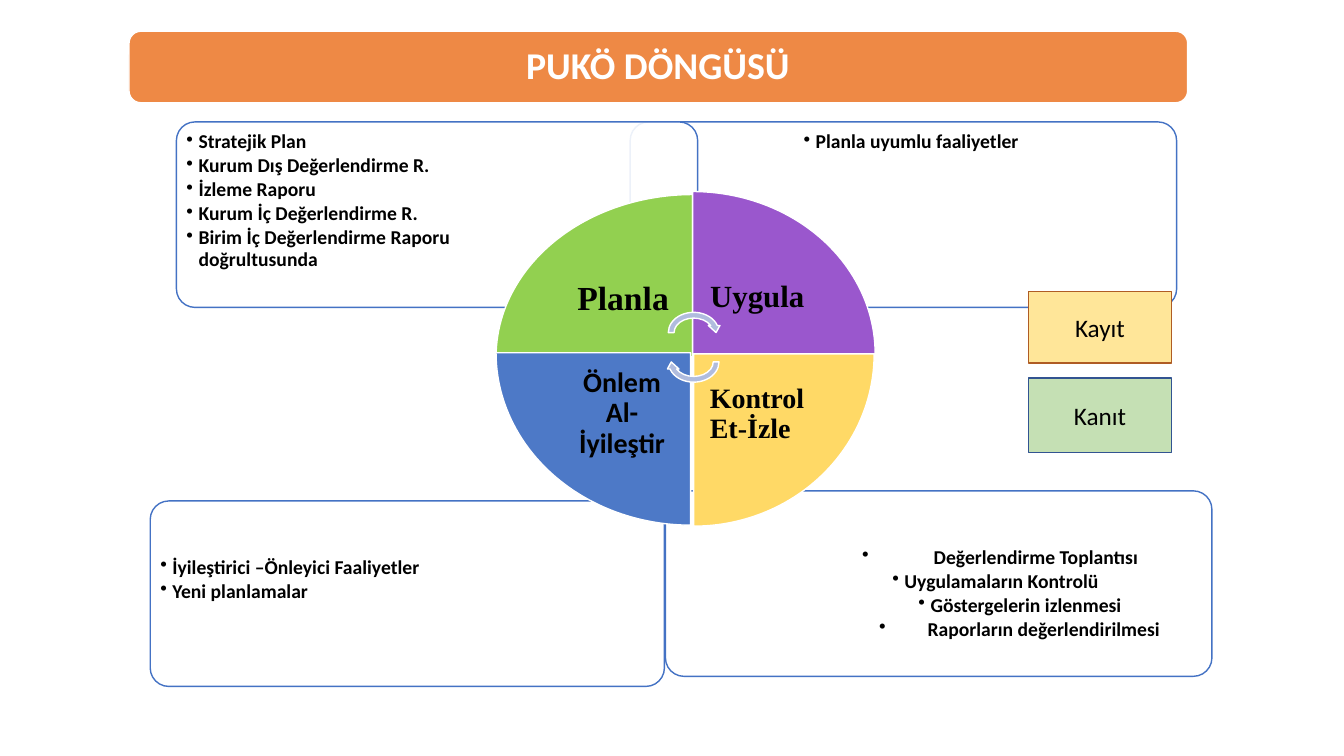
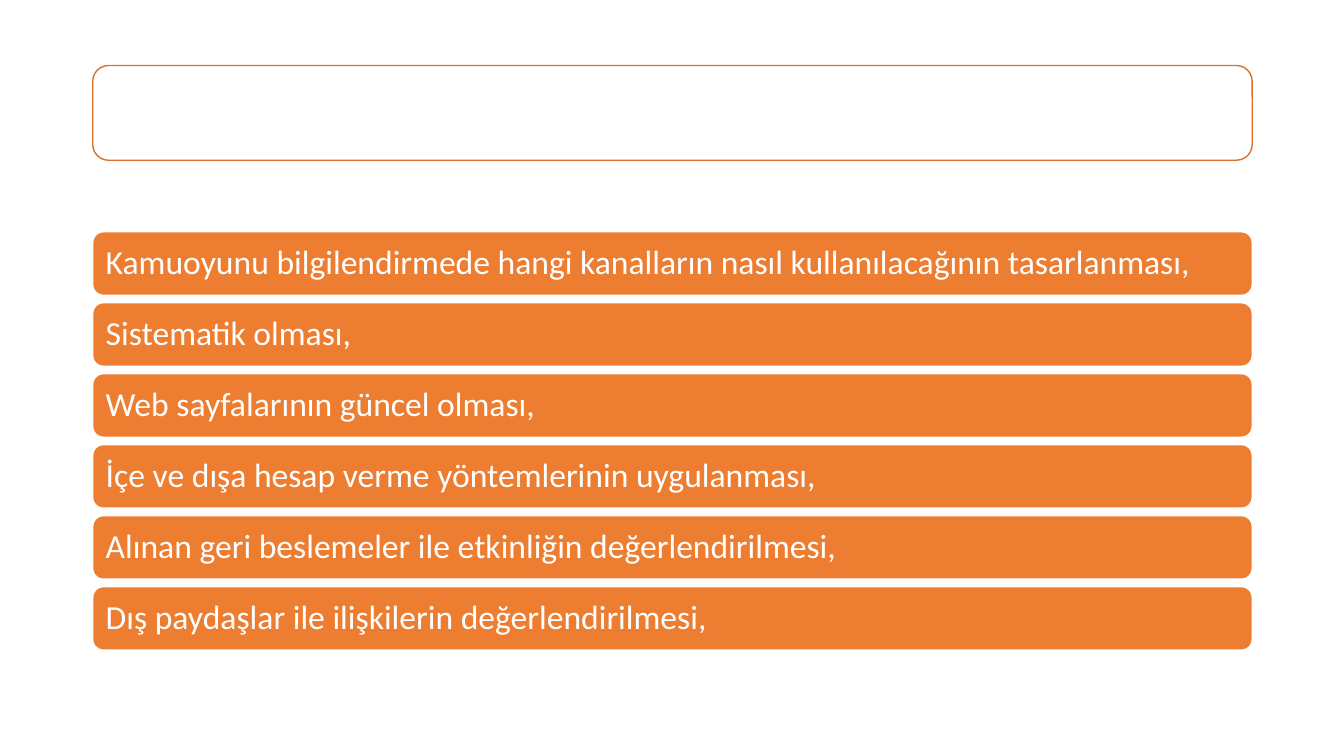
import pptx
import pptx.util
import pptx.dml.color
import pptx.enum.shapes
import pptx.enum.text
import pptx.oxml.ns
from lxml import etree

RGB = pptx.dml.color.RGBColor
SHAPE = pptx.enum.shapes.MSO_SHAPE
ALIGN = pptx.enum.text.PP_ALIGN
ANCHOR = pptx.enum.text.MSO_ANCHOR
qn = pptx.oxml.ns.qn

# Shared colours, fonts and scale
WHITE = RGB(0xFF, 0xFF, 0xFF)
BLACK = RGB(0x00, 0x00, 0x00)
ORANGE = RGB(0xED, 0x7D, 0x31)
DARK_ORANGE = RGB(0xD7, 0x71, 0x2C)
BLUE = RGB(0x44, 0x72, 0xC4)
GREEN = RGB(0x92, 0xD0, 0x50)
PURPLE = RGB(0x9A, 0x57, 0xCD)
YELLOW = RGB(0xFF, 0xD9, 0x66)
MID_BLUE = RGB(0x4D, 0x79, 0xC7)
PALE_BLUE = RGB(0xB0, 0xBC, 0xDE)
PALE_YELLOW = RGB(0xFF, 0xE6, 0x99)
PALE_GREEN = RGB(0xC5, 0xE0, 0xB4)
BROWN = RGB(0xAF, 0x5C, 0x24)
NAVY = RGB(0x32, 0x54, 0x91)

SANS, SERIF = "Calibri", "Times New Roman"
EMU_PER_PX = 9144
TITLE_ONLY, BLANK = 5, 6
HANG = 12

# Panels: outline, text area, and items as (text, left indent, hanging indent)
PANELS = [
    ((660, 487, 542, 184), (826, 537, 371, 130), [
        ("Değerlendirme Toplantısı", 94, 71),
        ("Uygulamaların Kontrolü", 65, HANG),
        ("Göstergelerin izlenmesi", 91, HANG),
        ("Raporların değerlendirilmesi", 88, 48)]),
    ((149, 497, 510, 184), (153, 547, 349, 130), [
        ("İyileştirici –Önleyici Faaliyetler", HANG, HANG),
        ("Yeni planlamalar", HANG, HANG)]),
    ((625, 121, 542, 184), (791, 125, 371, 130), [
        ("Planla uyumlu faaliyetler", HANG, HANG)]),
    ((175, 121, 517, 184), (179, 125, 354, 130), [
        ("Stratejik Plan", HANG, HANG),
        ("Kurum Dış Değerlendirme R.", HANG, HANG),
        ("İzleme Raporu", HANG, HANG),
        ("Kurum İç Değerlendirme R.", HANG, HANG),
        ("Birim İç Değerlendirme Raporu doğrultusunda", HANG, HANG)]),
]

# Wedges: outline, rotation, fill, text area, inset, text, size, font, alignment
WEDGES = [
    ((492, 193, 195, 161), 0, GREEN, (549, 240, 138, 114), 19,
     "Planla", 24, SERIF, ALIGN.CENTER),
    ((697, 180, 161, 181), 90, PURPLE, (687, 238, 128, 114), 17,
     "Uygula", 22, SERIF, ALIGN.CENTER),
    ((688, 351, 179, 171), 180, YELLOW, (688, 351, 126, 121), 16,
     "Kontrol Et-İzle", 20, SERIF, ALIGN.LEFT),
    ((503, 339, 171, 193), 270, MID_BLUE, (549, 350, 136, 121), 16,
     "Önlem Al-İyileştir", 20, SANS, ALIGN.CENTER),
]

PRINCIPLES = [
    "Kamuoyunu bilgilendirmede hangi kanalların nasıl kullanılacağının tasarlanması,",
    "Sistematik olması,",
    "Web sayfalarının güncel olması,",
    "İçe ve dışa hesap verme yöntemlerinin uygulanması,",
    "Alınan geri beslemeler ile etkinliğin değerlendirilmesi,",
    "Dış paydaşlar ile ilişkilerin değerlendirilmesi,",
]


def px(length):
    return pptx.util.Emu(round(length * EMU_PER_PX))


def set_values(target, values):
    for name, value in values.items():
        setattr(target, name, value)


def place(area):
    return [px(length) for length in area]


def add_outline(page, kind, area, fill, line, opacity=100, rotation=0, corner=None):
    shape = page.shapes.add_shape(kind, *place(area))
    shape.shadow.inherit = False
    shape.rotation = rotation
    shape.fill.solid()
    shape.fill.fore_color.rgb = fill
    shape.line.color.rgb = line
    shape.line.width = pptx.util.Pt(1)
    if corner is not None:
        shape.adjustments[0] = corner
    if opacity < 100:
        color = shape.fill._xPr.find(qn("a:solidFill"))[0]
        etree.SubElement(color, qn("a:alpha"), val=str(opacity * 1000))
    return shape


def set_frame(frame, inset, anchor):
    sides = ("left", "top", "right", "bottom")
    set_values(frame, {f"margin_{side}": px(inset) for side in sides})
    set_values(frame, {"word_wrap": True, "vertical_anchor": anchor,
                       "auto_size": pptx.enum.text.MSO_AUTO_SIZE.NONE})


def write_para(para, text, size, color, font=SANS, bold=False,
               align=ALIGN.LEFT, spacing=0.9):
    set_values(para, {"alignment": align, "line_spacing": spacing})
    span = para.add_run()
    span.text = text
    set_values(span.font, {"name": font, "size": pptx.util.Pt(size), "bold": bold})
    span.font.color.rgb = color


def write_bullets(frame, items):
    for index, (text, left, hang) in enumerate(items):
        para = frame.add_paragraph() if index else frame.paragraphs[0]
        write_para(para, text, 14, BLACK, bold=True)
        para.space_after = pptx.util.Pt(2)
        properties = para._p.get_or_add_pPr()
        properties.set("marL", str(px(left)))
        properties.set("indent", str(-px(hang)))
        etree.SubElement(properties, qn("a:buChar"), char="•")


def add_title_band(page, text):
    band = add_outline(page, SHAPE.ROUNDED_RECTANGLE, (128, 31, 1050, 71),
                       ORANGE, WHITE, opacity=90)
    title = page.shapes.title
    band._element.addnext(title._element)
    set_values(title, dict(zip(("left", "top", "width", "height"),
                               place((131, 35, 1043, 64)))))
    set_frame(title.text_frame, 11, ANCHOR.MIDDLE)
    write_para(title.text_frame.paragraphs[0], text, 27, WHITE,
               bold=True, align=ALIGN.CENTER)


def add_panel(page, area, text_area, items):
    add_outline(page, SHAPE.ROUNDED_RECTANGLE, area, WHITE, BLUE,
                opacity=90, corner=0.1)
    box = page.shapes.add_textbox(*place(text_area))
    set_frame(box.text_frame, 6, ANCHOR.TOP)
    write_bullets(box.text_frame, items)


def add_wedge(page, area, rotation, fill, text_area, inset, text, size, font, align):
    add_outline(page, SHAPE.PIE_WEDGE, area, fill, WHITE, rotation=rotation)
    box = page.shapes.add_textbox(*place(text_area))
    set_frame(box.text_frame, inset, ANCHOR.MIDDLE)
    write_para(box.text_frame.paragraphs[0], text, size, BLACK, font, True, align)


def add_label(page, area, text, fill, line):
    label = add_outline(page, SHAPE.RECTANGLE, area, fill, line)
    set_frame(label.text_frame, 5, ANCHOR.MIDDLE)
    write_para(label.text_frame.paragraphs[0], text, 18, BLACK,
               align=ALIGN.CENTER, spacing=1.0)


def add_bar(page, area, text):
    bar = add_outline(page, SHAPE.ROUNDED_RECTANGLE, area, ORANGE, WHITE)
    set_frame(bar.text_frame, 10, ANCHOR.MIDDLE)
    write_para(bar.text_frame.paragraphs[0], text, 24, WHITE)


def build_cycle(deck):
    page = deck.slides.add_slide(deck.slide_layouts[TITLE_ONLY])
    add_title_band(page, "PUKÖ DÖNGÜSÜ")
    for panel in PANELS:
        add_panel(page, *panel)
    for wedge in WEDGES:
        add_wedge(page, *wedge)
    # Turning arrows at the centre
    for top, rotation in ((307, 0), (336, 180)):
        add_outline(page, SHAPE.CIRCULAR_ARROW, (660, top, 56, 46),
                    PALE_BLUE, WHITE, rotation=rotation)
    add_label(page, (1020, 289, 142, 71), "Kayıt", PALE_YELLOW, BROWN)
    add_label(page, (1020, 375, 142, 74), "Kanıt", PALE_GREEN, NAVY)


def build_principles(deck):
    page = deck.slides.add_slide(deck.slide_layouts[BLANK])
    left, width = 92, 1150
    add_outline(page, SHAPE.ROUNDED_RECTANGLE, (left, 65, width, 94),
                WHITE, DARK_ORANGE)
    # Equal steps from the first bar to the last
    first, last = 230, 582
    step = (last - first) / (len(PRINCIPLES) - 1)
    for index, text in enumerate(PRINCIPLES):
        add_bar(page, (left, first + index * step, width, 63), text)


def main():
    deck = pptx.Presentation()
    set_values(deck, {"slide_width": px(1333), "slide_height": px(750)})
    build_cycle(deck)
    build_principles(deck)
    deck.save("out.pptx")


if __name__ == "__main__":
    main()
